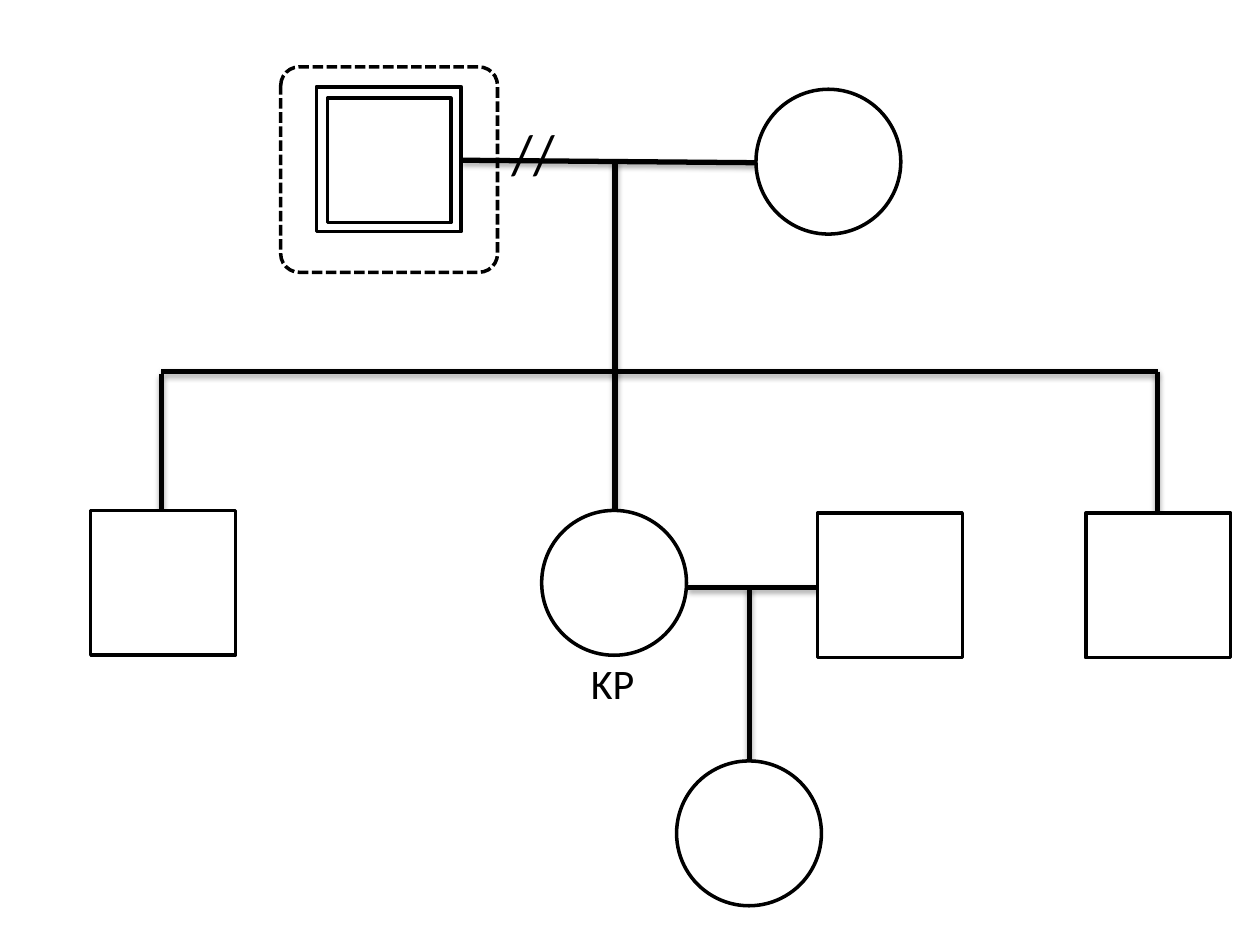
from lxml import etree
from pptx import Presentation
from pptx import util as u
from pptx.dml import color
from pptx.enum import dml, shapes, text
from pptx.oxml import ns

COLOURS = {"ink": "000000", "paper": "FFFFFF"}
SYMBOL = 2.92
SQUARE = shapes.MSO_SHAPE.RECTANGLE
CIRCLE = shapes.MSO_SHAPE.OVAL
MIDDLE, LEFT, RIGHT = 12.4, 3.25, 23.34
SIBLING_Y, COUPLE_Y, CHILD_X = 7.49, 11.84, 15.11
SHADOW = {"blurRad": u.Pt(3.1), "dist": u.Pt(1.8), "dir": 5400000, "rotWithShape": 0}


def rgb(name):
    """Return the named colour."""
    return color.RGBColor.from_string(COLOURS[name])


def apply(target, values):
    """Set every attribute in values on target."""
    for name, value in values.items():
        setattr(target, name, value)


def add_outline(slide, kind, left, top, width=SYMBOL, height=SYMBOL, fill="paper", dash=None):
    """Add an outlined shape, filled unless fill is None."""
    shape = slide.shapes.add_shape(kind, *map(u.Cm, (left, top, width, height)))
    shape.shadow.inherit = False
    if fill:
        shape.fill.solid()
        shape.fill.fore_color.rgb = rgb(fill)
    else:
        shape.fill.background()
    shape.line.color.rgb = rgb("ink")
    apply(shape.line, {"width": u.Pt(2), "dash_style": dash})
    return shape


def add_relation(slide, x1, y1, x2, y2):
    """Add a family line with a soft shadow below it."""
    connector = slide.shapes.add_connector(
        shapes.MSO_CONNECTOR.STRAIGHT, *map(u.Cm, (x1, y1, x2, y2)))
    connector.line.color.rgb = rgb("ink")
    connector.line.width = u.Pt(3)
    effects = etree.SubElement(connector._element.spPr, ns.qn("a:effectLst"))
    shadow = etree.SubElement(effects, ns.qn("a:outerShdw"),
                              {key: str(value) for key, value in SHADOW.items()})
    tint = etree.SubElement(shadow, ns.qn("a:srgbClr"), val=COLOURS["ink"])
    etree.SubElement(tint, ns.qn("a:alpha"), val="35000")


def add_label(slide, words, size, left, top, width, height):
    """Add an unwrapped label that fits its text."""
    frame = slide.shapes.add_textbox(*map(u.Cm, (left, top, width, height))).text_frame
    apply(frame, {"word_wrap": False, "auto_size": text.MSO_AUTO_SIZE.SHAPE_TO_FIT_TEXT})
    run = frame.paragraphs[0].add_run()
    run.text = words
    apply(run.font, {"name": "Calibri", "size": u.Pt(size)})
    run.font.color.rgb = rgb("ink")


def main():
    """Build the family tree slide."""
    presentation = Presentation()
    apply(presentation, {"slide_width": u.Cm(25.4), "slide_height": u.Cm(19.05)})
    slide = presentation.slides.add_slide(presentation.slide_layouts[6])

    relations = [
        (9.32, 3.23, 15.24, 3.28),
        (MIDDLE, 3.23, MIDDLE, SIBLING_Y),
        (LEFT, SIBLING_Y, RIGHT, SIBLING_Y),
        (LEFT, 7.54, LEFT, 10.34),
        (MIDDLE, SIBLING_Y, MIDDLE, 10.29),
        (RIGHT, SIBLING_Y, RIGHT, 10.34),
        (13.87, COUPLE_Y, 16.64, COUPLE_Y),
        (CHILD_X, COUPLE_Y, CHILD_X, 15.34),
    ]
    for relation in relations:
        add_relation(slide, *relation)

    people = [
        (SQUARE, 6.38, 1.75),
        (CIRCLE, 15.24, 1.8),
        (SQUARE, 1.83, 10.29),
        (CIRCLE, 10.92, 10.29),
        (SQUARE, 16.48, 10.34),
        (SQUARE, 21.89, 10.34),
        (CIRCLE, 13.64, 15.34),
    ]
    for person in people:
        add_outline(slide, *person)

    add_outline(slide, SQUARE, 6.6, 1.98, 2.49, 2.51)
    household = add_outline(slide, shapes.MSO_SHAPE.ROUNDED_RECTANGLE, 5.66, 1.35, 4.37, 4.14,
                            fill=None, dash=dml.MSO_LINE.SQUARE_DOT)
    household.adjustments[0] = 0.09
    add_label(slide, "KP", 24, 11.66, 13.13, 1.47, 1.27)
    add_label(slide, "//", 32, 10.06, 2.26, 1.4, 1.63)
    presentation.save("out.pptx")


if __name__ == "__main__":
    main()
